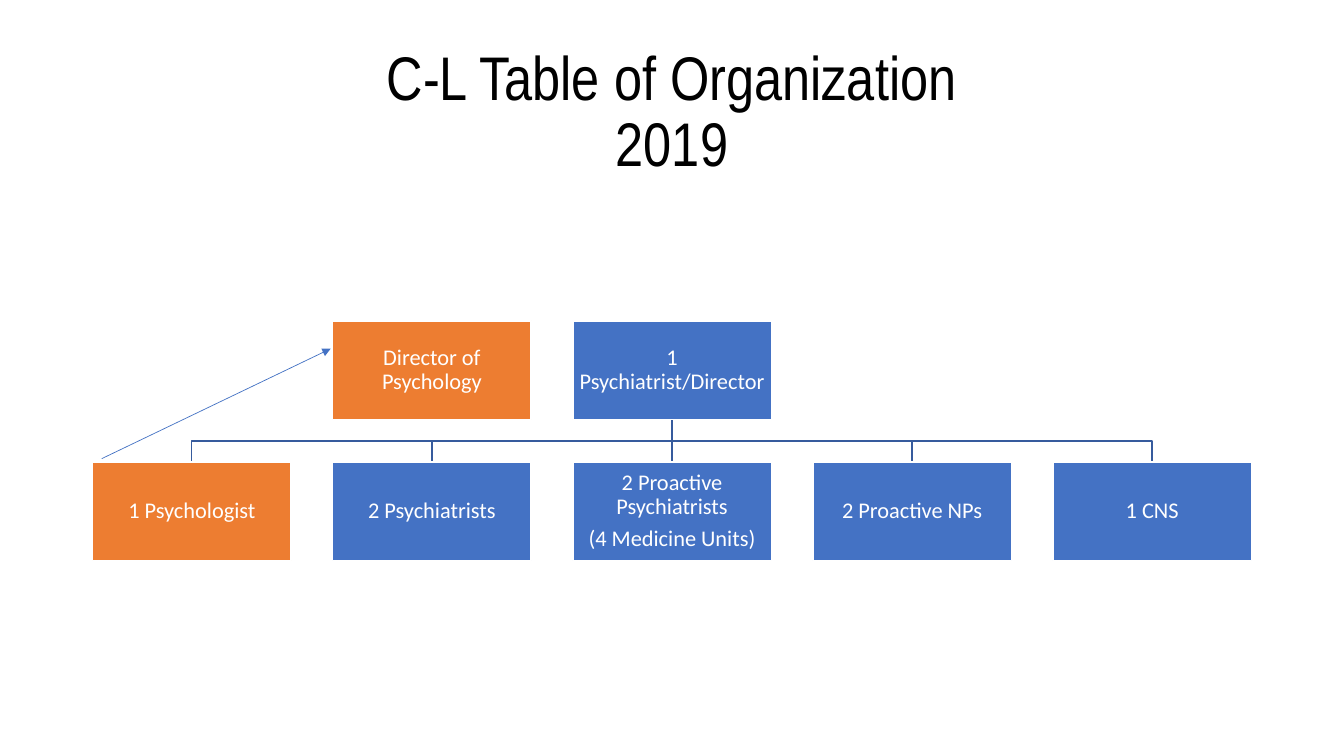
from lxml import etree
from pptx import Presentation
from pptx.dml.color import RGBColor
from pptx.enum.shapes import MSO_CONNECTOR, MSO_SHAPE
from pptx.enum.text import MSO_ANCHOR, MSO_AUTO_SIZE, PP_ALIGN
from pptx.oxml.ns import qn
from pptx.util import Pt

STRAIGHT = MSO_CONNECTOR.STRAIGHT
RECTANGLE = MSO_SHAPE.RECTANGLE
MIDDLE = MSO_ANCHOR.MIDDLE
CENTER = PP_ALIGN.CENTER
NO_AUTOFIT = MSO_AUTO_SIZE.NONE

# Content: (column, fill, paragraphs) for each box
TITLE_LINES = ["C-L Table of Organization", "2019"]
DIRECTORS = [
    (1, "orange", ["Director of Psychology"]),
    (2, "blue", ["1 Psychiatrist/Director"]),
]
TEAM = [
    (0, "orange", ["1 Psychologist"]),
    (1, "blue", ["2 Psychiatrists"]),
    (2, "blue", ["2 Proactive Psychiatrists", "(4 Medicine Units)"]),
    (3, "blue", ["2 Proactive NPs"]),
    (4, "blue", ["1 CNS"]),
]
LEAD_COLUMN = 2

COLORS = {"blue": "4472C4", "orange": "ED7D31", "branch": "365B9D",
          "white": "FFFFFF", "black": "000000"}
BOX_FRAME = {"word_wrap": True, "auto_size": NO_AUTOFIT, "vertical_anchor": MIDDLE,
             "margin_left": Pt(0.9), "margin_right": Pt(0.9),
             "margin_top": Pt(0.9), "margin_bottom": Pt(0.9)}
TITLE_FRAME = {"word_wrap": True, "auto_size": NO_AUTOFIT, "vertical_anchor": MIDDLE}
BOX_PARAGRAPH = {"alignment": CENTER, "line_spacing": 0.9, "space_after": Pt(5.6)}
TITLE_PARAGRAPH = {"alignment": CENTER, "line_spacing": 0.9}
BOX_FONT = {"name": "Calibri", "size": Pt(16)}
TITLE_FONT = {"name": "Arial Narrow", "size": Pt(44)}

# Layout, in points
LEFT, PITCH = 66.15, 171.5
BOX_WIDTH, BOX_HEIGHT = 141.75, 70.5
DIRECTOR_TOP, TEAM_TOP = 229.2, 330
TRUNK_TOP = 300.2
BRANCH_Y = (TRUNK_TOP + TEAM_TOP) / 2


def apply(target, values):
    for key, value in values.items():
        setattr(target, key, value)


def rgb(color):
    return RGBColor.from_string(COLORS[color])


def center_of(column):
    return LEFT + column * PITCH + BOX_WIDTH / 2


def style_line(shape, color, width):
    shape.line.color.rgb = rgb(color)
    shape.line.width = Pt(width)


def add_line(start, end, color, width):
    line = slide.shapes.add_connector(STRAIGHT, *map(Pt, start + end))
    style_line(line, color, width)
    etree.SubElement(line._element.spPr, qn("a:effectLst"))
    return line


def add_branch(column):
    trunk_x, box_x = center_of(LEAD_COLUMN), center_of(column)
    if column == LEAD_COLUMN:
        add_line((trunk_x, TRUNK_TOP), (box_x, TEAM_TOP), "branch", 1)
        return
    builder = slide.shapes.build_freeform(Pt(trunk_x), Pt(TRUNK_TOP))
    corners = [(trunk_x, BRANCH_Y), (box_x, BRANCH_Y), (box_x, TEAM_TOP)]
    builder.add_line_segments([(Pt(x), Pt(y)) for x, y in corners], close=False)
    branch = builder.convert_to_shape()
    branch.shadow.inherit = False
    branch.fill.background()
    style_line(branch, "branch", 1)


def add_box(column, top, fill, paragraphs):
    box = slide.shapes.add_shape(RECTANGLE, Pt(LEFT + column * PITCH), Pt(top),
                                 Pt(BOX_WIDTH), Pt(BOX_HEIGHT))
    box.shadow.inherit = False
    box.fill.solid()
    box.fill.fore_color.rgb = rgb(fill)
    style_line(box, "white", 1)
    frame = box.text_frame
    apply(frame, BOX_FRAME)
    for index, text in enumerate(paragraphs):
        paragraph = frame.add_paragraph() if index else frame.paragraphs[0]
        apply(paragraph, BOX_PARAGRAPH)
        run = paragraph.add_run()
        run.text = text
        apply(run.font, BOX_FONT)
        run.font.color.rgb = rgb("white")


presentation = Presentation()
presentation.slide_width, presentation.slide_height = Pt(960), Pt(540)
slide = presentation.slides.add_slide(presentation.slide_layouts[5])

# Title
title = slide.shapes.title
apply(title, {"left": Pt(66), "top": Pt(28.75), "width": Pt(828), "height": Pt(104.4)})
apply(title.text_frame, TITLE_FRAME)
heading = title.text_frame.paragraphs[0]
apply(heading, TITLE_PARAGRAPH)
for index, text in enumerate(TITLE_LINES):
    if index:
        heading.add_line_break()
    run = heading.add_run()
    run.text = text
    apply(run.font, TITLE_FONT)
    run.font.color.rgb = rgb("black")

# Branches from the lead psychiatrist to the team
for column, _, _ in reversed(TEAM):
    add_branch(column)

# Boxes
for top, row in ((DIRECTOR_TOP, DIRECTORS), (TEAM_TOP, TEAM)):
    for column, fill, paragraphs in row:
        add_box(column, top, fill, paragraphs)

# Arrow from the psychologist to the director of psychology
reporting_arrow = add_line((72.7, 327.6), (236.2, 249.1), "blue", 0.5)
etree.SubElement(reporting_arrow.line._get_or_add_ln(), qn("a:tailEnd"), type="triangle")

presentation.save("out.pptx")
